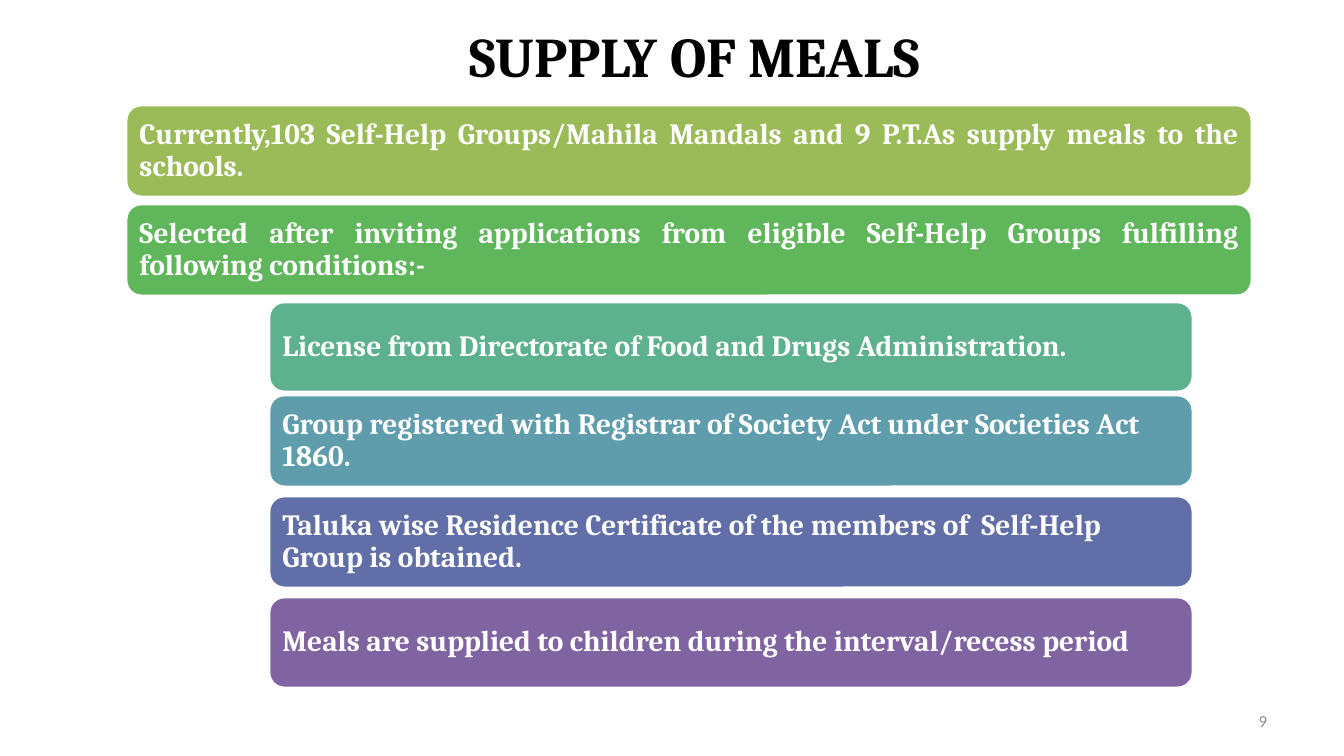
from dataclasses import dataclass

from pptx import Presentation
from pptx.dml.color import RGBColor
from pptx.enum.shapes import MSO_SHAPE
from pptx.enum.text import MSO_ANCHOR, MSO_AUTO_SIZE, PP_ALIGN
from pptx.util import Emu, Pt

PX_PER_INCH = 100.8


@dataclass(frozen=True)
class Level:
    left: int
    width: int
    align: PP_ALIGN


@dataclass(frozen=True)
class Bar:
    level: Level
    top: int
    height: int
    color: str
    text: str


POINT = Level(126, 1126, PP_ALIGN.JUSTIFY)
CONDITION = Level(269, 924, PP_ALIGN.LEFT)

BARS = [
    Bar(POINT, 105, 92, "9BBB59",
        "Currently,103 Self-Help Groups/Mahila Mandals and 9 P.T.As supply meals to the schools."),
    Bar(POINT, 204, 92, "5FB65B",
        "Selected after inviting applications from eligible Self-Help Groups fulfilling following conditions:-"),
    Bar(CONDITION, 302, 90, "5DB18E",
        "License from Directorate of Food and Drugs Administration."),
    Bar(CONDITION, 395, 92, "5F9DAC",
        "Group registered with Registrar of Society Act under Societies Act 1860."),
    Bar(CONDITION, 496, 92, "626EA7",
        "Taluka wise Residence Certificate of the members of  Self-Help Group is obtained."),
    Bar(CONDITION, 597, 91, "8064A2",
        "Meals are supplied to children during the interval/recess period"),
]


def px(n: int) -> Emu:
    return Emu(round(n * 914400 / PX_PER_INCH))


def rgb(color: str) -> RGBColor:
    return RGBColor.from_string(color)


def place(sp, left: int, top: int, width: int, height: int) -> None:
    sp.left, sp.top, sp.width, sp.height = px(left), px(top), px(width), px(height)


def write(sp, text: str, size: int, font: str, color: str, bold: bool, align: PP_ALIGN):
    tf = sp.text_frame
    tf.text = text
    tf.word_wrap = True
    tf.auto_size = MSO_AUTO_SIZE.NONE
    tf.vertical_anchor = MSO_ANCHOR.MIDDLE
    p = tf.paragraphs[0]
    p.alignment = align
    r = p.runs[0]
    r.font.size = Pt(size)
    r.font.name = font
    r.font.bold = bold
    r.font.color.rgb = rgb(color)
    return tf


def draw_bar(slide, bar: Bar) -> None:
    sp = slide.shapes.add_shape(
        MSO_SHAPE.ROUNDED_RECTANGLE,
        px(bar.level.left), px(bar.top), px(bar.level.width), px(bar.height))
    sp.shadow.inherit = False
    sp.fill.solid()
    sp.fill.fore_color.rgb = rgb(bar.color)
    sp.line.color.rgb = rgb("FFFFFF")
    sp.line.width = Pt(2)
    tf = write(sp, bar.text, 21, "Cambria", "FFFFFF", True, bar.level.align)
    tf.margin_left = tf.margin_right = tf.margin_top = tf.margin_bottom = px(9)
    tf.paragraphs[0].line_spacing = 0.9


def main() -> None:
    prs = Presentation()
    prs.slide_width, prs.slide_height = px(1344), px(756)
    slide = prs.slides.add_slide(prs.slide_layouts[5])

    title = slide.shapes.title
    place(title, 126, 17, 1137, 76)
    write(title, "SUPPLY OF MEALS", 40, "Cambria", "000000", True, PP_ALIGN.CENTER)

    for bar in BARS:
        draw_bar(slide, bar)

    number = slide.shapes.add_textbox(px(964), px(701), px(313), px(40))
    write(number, "9", 12, "Calibri", "8C8C8C", False, PP_ALIGN.RIGHT)

    prs.save("out.pptx")


if __name__ == "__main__":
    main()
